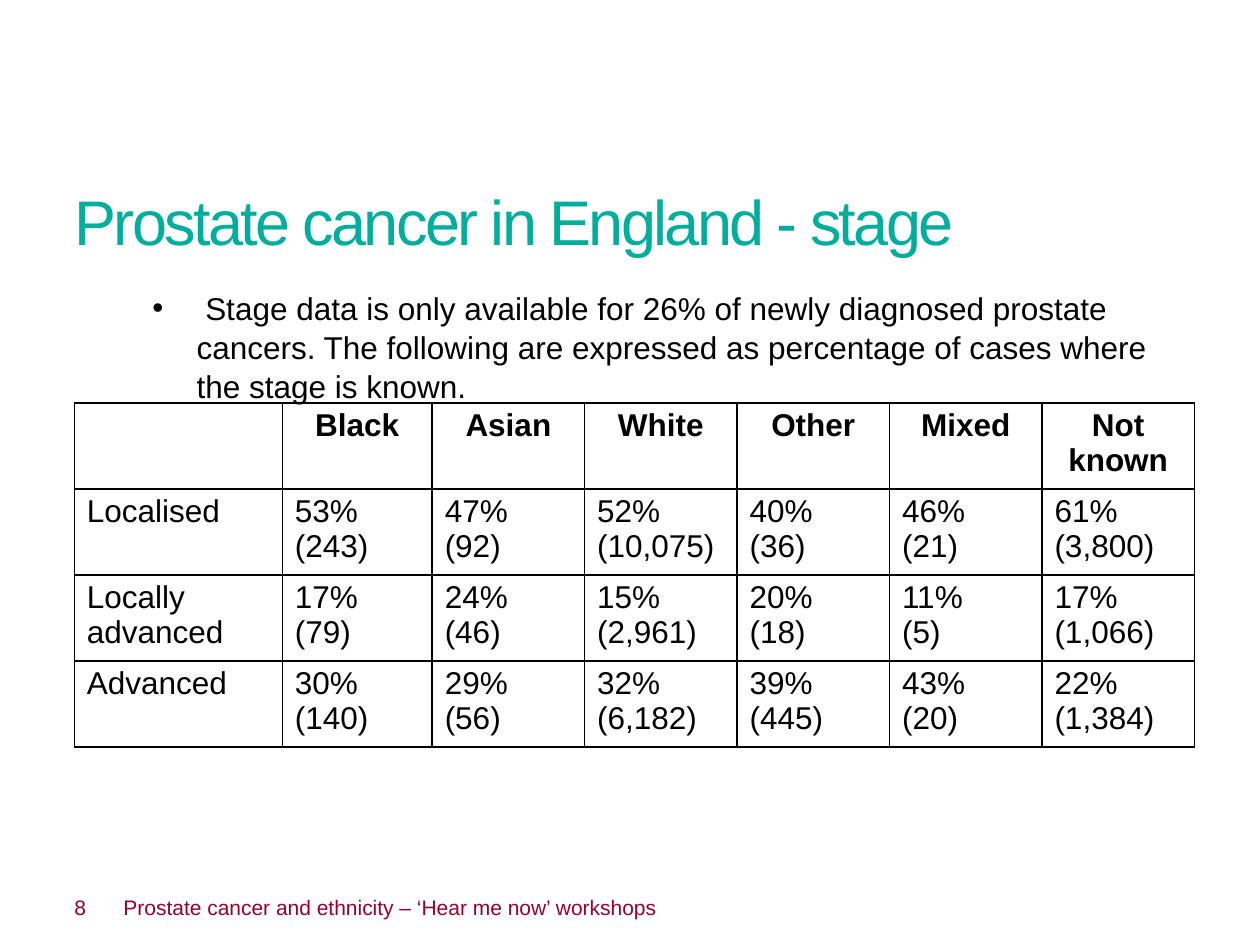
from lxml import etree
from pptx import Presentation
from pptx import util as u
from pptx.dml.color import RGBColor
from pptx.enum import shapes, text
from pptx.oxml.ns import qn

FONT = "Arial"
COLORS = {
    "title": "00AE9E",
    "body": "000000",
    "footer": "98002E",
    "background": "FFFFFF",
    "border": "000000",
}
COLUMN_WIDTHS = [1.65, 1.19] + [1.21] * 5
ROW_HEIGHT = 0.66
STAGES = [
    ["", "Black", "Asian", "White", "Other", "Mixed", "Not known"],
    ["Localised", "53% (243)", "47% (92)", "52% (10,075)", "40% (36)", "46% (21)", "61% (3,800)"],
    ["Locally advanced", "17% (79)", "24% (46)", "15% (2,961)", "20% (18)", "11%\n(5)", "17% (1,066)"],
    ["Advanced", "30% (140)", "29% (56)", "32% (6,182)", "39% (445)", "43% (20)", "22% (1,384)"],
]


def color(name):
    return RGBColor.from_string(COLORS[name])


def style_font(font, size, color_name, bold=False):
    font.name = FONT
    font.size = u.Pt(size)
    font.bold = bold
    font.color.rgb = color(color_name)


def fill_frame(frame, words, size, color_name, anchor):
    frame.word_wrap = True
    frame.vertical_anchor = anchor
    frame.margin_left = frame.margin_right = 0
    frame.margin_top = frame.margin_bottom = 0
    frame.text = words
    para = frame.paragraphs[0]
    para.alignment = text.PP_ALIGN.LEFT
    style_font(para.runs[0].font, size, color_name)
    return para


def add_text(page, place, words, size, color_name, anchor=text.MSO_ANCHOR.TOP):
    box = page.shapes.add_textbox(*map(u.Inches, place))
    return fill_frame(box.text_frame, words, size, color_name, anchor)


def set_indent(para, left, first):
    props = para._p.get_or_add_pPr()
    props.set("marL", str(u.Inches(left)))
    props.set("indent", str(u.Inches(first)))
    return props


def add_bullet_text(page, place, words):
    para = add_text(page, place, words, 18, "body")
    props = set_indent(para, 0.95, -0.35)
    etree.SubElement(props, qn("a:buFont"), typeface=FONT)
    etree.SubElement(props, qn("a:buChar"), char="•")
    para.line_spacing = 1.04


def add_page_number(page, place, number):
    band = page.shapes.add_shape(shapes.MSO_SHAPE.RECTANGLE, *map(u.Inches, place))
    band.shadow.inherit = False
    band.fill.solid()
    band.fill.fore_color.rgb = color("background")
    band.line.fill.background()
    para = fill_frame(band.text_frame, number, 12, "footer", text.MSO_ANCHOR.MIDDLE)
    set_indent(para, 0.59, 0)


def set_borders(cell):
    props = cell._tc.get_or_add_tcPr()
    for position, side in enumerate(("lnL", "lnR", "lnT", "lnB")):
        line = etree.Element(qn(f"a:{side}"), w=str(u.Pt(1)))
        fill = etree.SubElement(line, qn("a:solidFill"))
        etree.SubElement(fill, qn("a:srgbClr"), val=COLORS["border"])
        props.insert(position, line)


def fill_cell(cell, words, header):
    cell.fill.background()
    set_borders(cell)
    cell.text_frame.text = words
    for para in cell.text_frame.paragraphs:
        para.alignment = text.PP_ALIGN.CENTER if header else text.PP_ALIGN.LEFT
        para.line_spacing = 0.97
        style_font(para.font, 18, "body", header)
        for span in para.runs:
            style_font(span.font, 18, "body", header)


def add_stage_table(page, left, top):
    size = (sum(COLUMN_WIDTHS), ROW_HEIGHT * len(STAGES))
    place = map(u.Inches, (left, top, *size))
    table = page.shapes.add_table(len(STAGES), len(COLUMN_WIDTHS), *place).table
    table.horz_banding = False
    for column, width in zip(table.columns, COLUMN_WIDTHS):
        column.width = u.Inches(width)
    for index, values in enumerate(STAGES):
        table.rows[index].height = u.Inches(ROW_HEIGHT)
        for cell, words in zip(table.rows[index].cells, values):
            fill_cell(cell, words, header=index == 0)


def main():
    deck = Presentation()
    deck.slide_width, deck.slide_height = u.Inches(10), u.Inches(7.5)
    page = deck.slides.add_slide(deck.slide_layouts[6])

    title = add_text(page, (0.59, 1.39, 8.78, 0.71), "Prostate cancer in England - stage",
                     36, "title", text.MSO_ANCHOR.MIDDLE)
    title.runs[0].font._element.set("spc", "-150")
    add_bullet_text(page, (0.61, 2.28, 8.78, 0.76),
                    " Stage data is only available for 26% of newly diagnosed prostate cancers. "
                    "The following are expressed as percentage of cases where the stage is known.")
    add_page_number(page, (0, 6.9, 10, 0.6), "8")
    add_text(page, (0.98, 6.9, 8.43, 0.6), "Prostate cancer and ethnicity – ‘Hear me now’ workshops",
             12, "footer", text.MSO_ANCHOR.MIDDLE)
    add_stage_table(page, 0.59, 3.2)

    deck.save("out.pptx")


if __name__ == "__main__":
    main()
